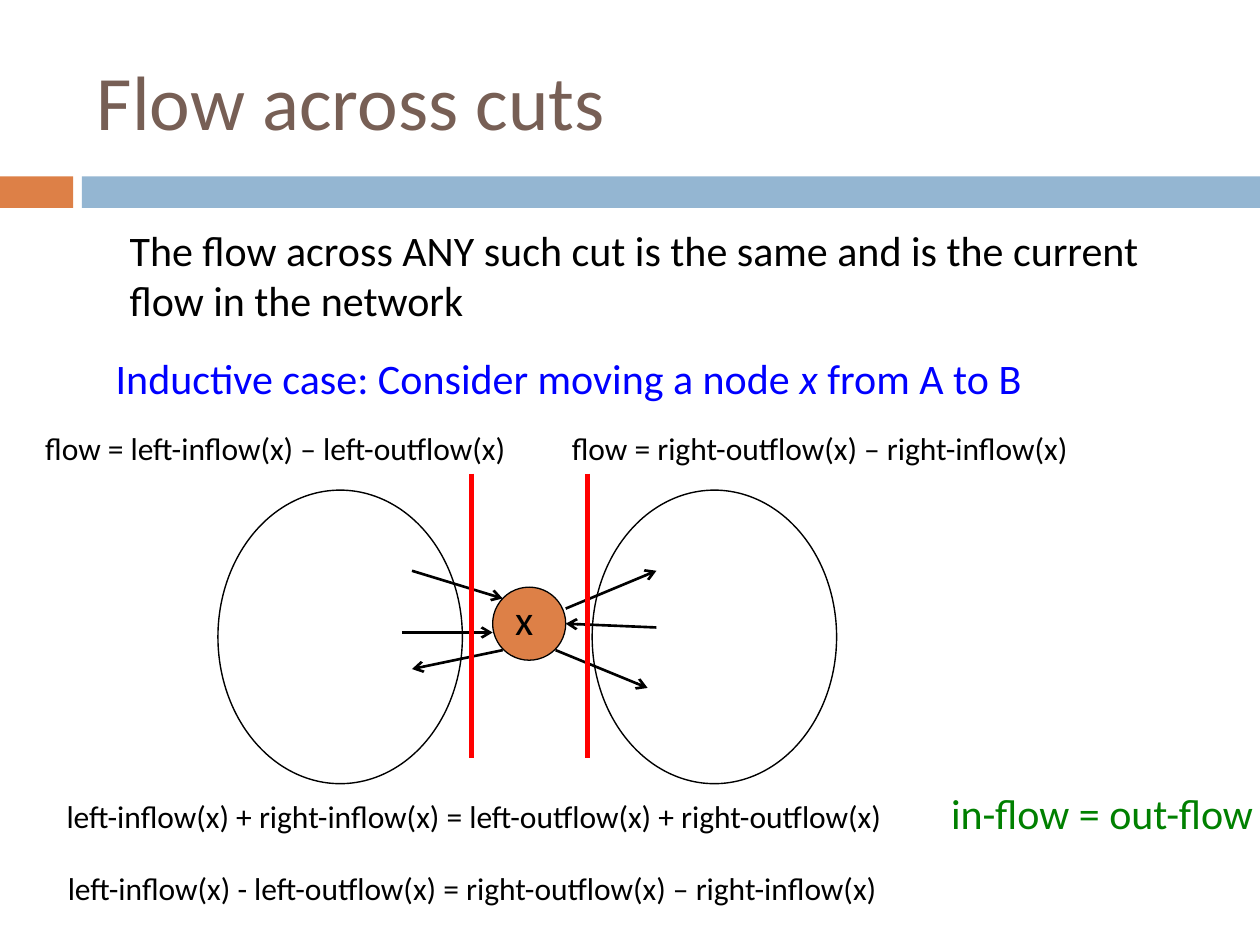
from lxml import etree
from pptx import Presentation
from pptx.dml.color import RGBColor
from pptx.enum.shapes import MSO_CONNECTOR, MSO_SHAPE
from pptx.enum.text import MSO_ANCHOR as Anchor
from pptx.oxml.ns import qn
from pptx.util import Inches, Pt

BLACK = RGBColor(0x00, 0x00, 0x00)
BLUE = RGBColor(0x00, 0x00, 0xFF)
GREEN = RGBColor(0x00, 0x80, 0x00)
RED = RGBColor(0xFF, 0x00, 0x00)
BROWN = RGBColor(0x77, 0x5F, 0x55)
ORANGE = RGBColor(0xDD, 0x80, 0x47)
SKY = RGBColor(0x94, 0xB6, 0xD2)


class SlideBuilder:
    font = "Calibri"

    def __init__(self, slide):
        self.slide = slide

    def text(self, box, *parts, size=24, color=BLACK, anchor=Anchor.TOP,
             wrap=True, italic=None):
        """Add one paragraph of runs; the part equal to italic is slanted."""
        shape = self.slide.shapes.add_textbox(*map(Inches, box))
        frame = shape.text_frame
        frame.word_wrap = wrap
        frame.vertical_anchor = anchor
        for part in parts:
            run = frame.paragraphs[0].add_run()
            run.text = part
            run.font.name = self.font
            run.font.size = Pt(size)
            run.font.color.rgb = color
            run.font.italic = part == italic

    def shape(self, kind, box, fill=None, line_width=None):
        shape = self.slide.shapes.add_shape(kind, *map(Inches, box))
        shape.shadow.inherit = False
        if fill is None:
            shape.fill.background()
        else:
            shape.fill.solid()
            shape.fill.fore_color.rgb = fill
        if line_width is None:
            shape.line.fill.background()
        else:
            shape.line.color.rgb = BLACK
            shape.line.width = Pt(line_width)

    def line(self, start, end, color=BLACK, width=1.5, arrow=False):
        line = self.slide.shapes.add_connector(
            MSO_CONNECTOR.STRAIGHT, *map(Inches, start + end))
        line.line.color.rgb = color
        line.line.width = Pt(width)
        properties = line.element.spPr
        if arrow:
            outline = properties.find(qn("a:ln"))
            etree.SubElement(outline, qn("a:tailEnd"), type="arrow")
        etree.SubElement(properties, qn("a:effectLst"))


def main():
    presentation = Presentation()
    presentation.slide_width = Inches(10)
    presentation.slide_height = Inches(7.5)
    builder = SlideBuilder(
        presentation.slides.add_slide(presentation.slide_layouts[6]))

    builder.shape(MSO_SHAPE.RECTANGLE, (0, 1.4, 0.58, 0.25), ORANGE)
    builder.shape(MSO_SHAPE.RECTANGLE, (0.65, 1.4, 9.35, 0.25), SKY)
    builder.text((0.67, 0.25, 8.92, 1.08), "Flow across cuts",
                 size=44, color=BROWN, anchor=Anchor.MIDDLE)
    builder.text((0.93, 1.73, 8.52, 0.91),
                 "The flow across ANY such cut is the same and is the current "
                 "flow in the network")
    builder.text((0.82, 2.75, 8.77, 0.5),
                 "Inductive case: Consider moving a node ", "x",
                 " from A to B", color=BLUE, italic="x")

    for side_left in (1.73, 4.7):
        builder.shape(MSO_SHAPE.OVAL, (side_left, 3.89, 1.94, 2.33),
                      line_width=0.79)
    builder.shape(MSO_SHAPE.OVAL, (3.91, 4.66, 0.58, 0.58), ORANGE, 0.75)
    builder.text((3.99, 4.66, 0.5, 0.5), "x")

    flow_arrows = [
        ((3.27, 4.53), (3.99, 4.75)),
        ((3.19, 5.02), (3.91, 5.02)),
        ((3.99, 5.16), (3.27, 5.31)),
        ((4.49, 4.83), (5.21, 4.53)),
        ((5.21, 4.98), (4.49, 4.95)),
        ((4.41, 5.16), (5.14, 5.46)),
    ]
    for start, end in flow_arrows:
        builder.line(start, end, arrow=True)
    for cut_x in (3.74, 4.66):
        builder.line((cut_x, 3.76), (cut_x, 6.02), RED, 3)

    builder.text((7.45, 6.2, 2.6, 0.5), "in-flow = out-flow",
                 color=GREEN, wrap=False)
    equations = [
        (0.26, 3.36, 3.91, "flow = left-inflow(x) – left-outflow(x)"),
        (4.44, 3.36, 5.87, "flow = right-outflow(x) – right-inflow(x)"),
        (0.43, 6.28, 7.46, "left-inflow(x) + right-inflow(x) = "
                           "left-outflow(x) + right-outflow(x)"),
        (0.44, 6.85, 7.46, "left-inflow(x) - left-outflow(x) = "
                           "right-outflow(x) – right-inflow(x)"),
    ]
    for left, top, width, equation in equations:
        builder.text((left, top, width, 0.4), equation, size=18)

    presentation.save("out.pptx")


if __name__ == "__main__":
    main()
